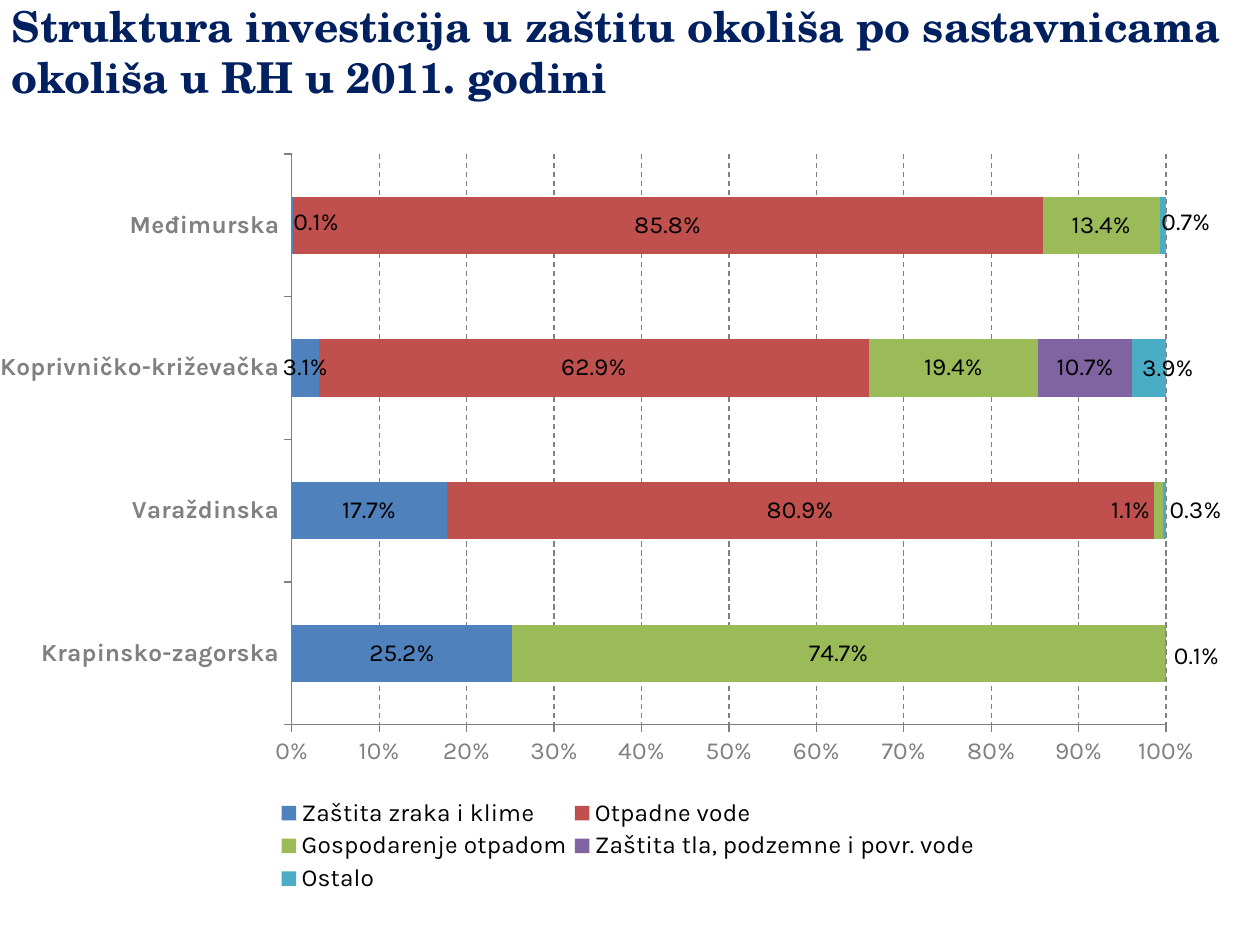
from pptx import Presentation
from pptx.chart.data import CategoryChartData
from pptx.dml.color import RGBColor
from pptx.enum.chart import XL_CHART_TYPE, XL_LABEL_POSITION, XL_LEGEND_POSITION, XL_TICK_MARK
from pptx.enum.dml import MSO_LINE
from pptx.enum.text import MSO_ANCHOR
from pptx.oxml import parse_xml
from pptx.oxml.ns import nsdecls, qn
from pptx.util import Pt

PX = 914400 / 126
STACKED_BARS = XL_CHART_TYPE.BAR_STACKED_100
LABEL_CENTER = XL_LABEL_POSITION.CENTER
LEGEND_BOTTOM = XL_LEGEND_POSITION.BOTTOM
TICK_OUTSIDE = XL_TICK_MARK.OUTSIDE
TICK_NONE = XL_TICK_MARK.NONE
DASH = MSO_LINE.DASH
TOP = MSO_ANCHOR.TOP

TITLE_BOX = (0, 0, 1260, 155)
CHART_BOX = (0, 135, 1245, 764)
PLOT_BOX = (290, 19, 876, 571)
LEGEND_BOX = (272, 660, 710, 102)
GREY = "808080"
TITLE = "Struktura investicija u zaštitu okoliša po sastavnicama okoliša u RH u 2011. godini"
COUNTIES = ["Krapinsko-zagorska", "Varaždinska", "Koprivničko-križevačka", "Međimurska"]
INVESTMENTS = [
    ("Zaštita zraka i klime", "4F81BD", (0.252, 0.177, 0.031, 0.001)),
    ("Otpadne vode", "C0504D", (0, 0.809, 0.629, 0.858)),
    ("Gospodarenje otpadom", "9BBB59", (0.747, 0.011, 0.194, 0.134)),
    ("Zaštita tla, podzemne i povr. vode", "8064A2", (0, 0, 0.107, 0)),
    ("Ostalo", "4BACC6", (0.001, 0.003, 0.039, 0.007)),
]
LABEL_SHIFTS = {
    ("Zaštita zraka i klime", 3): (24, -3),
    ("Gospodarenje otpadom", 1): (-28, 0),
    ("Ostalo", 0): (31, 3),
    ("Ostalo", 1): (31, 0),
    ("Ostalo", 2): (19, 1),
    ("Ostalo", 3): (23, -3),
}


def px(length):
    return round(length * PX)


def color(value):
    return RGBColor.from_string(value)


def set_format(target, values):
    for name, value in values.items():
        setattr(target, name, value)


def set_font(font, value, **values):
    set_format(font, values)
    font.color.rgb = color(value)


def set_line(line, value):
    line.width = Pt(0.75)
    line.color.rgb = color(value)


def manual_layout(box):
    left, top, width, height = box
    parts = {
        "xMode": "edge", "yMode": "edge",
        "x": left / CHART_BOX[2], "y": top / CHART_BOX[3],
        "w": width / CHART_BOX[2], "h": height / CHART_BOX[3],
    }
    content = "".join(f'<c:{name} val="{value}"/>' for name, value in parts.items())
    return f"<c:manualLayout>{content}</c:manualLayout>"


def place_plot_area(chart):
    plot_area = chart._chartSpace.chart.plotArea
    for layout in plot_area.findall(qn("c:layout")):
        plot_area.remove(layout)
    content = manual_layout(PLOT_BOX).replace(
        "<c:manualLayout>", '<c:manualLayout><c:layoutTarget val="inner"/>')
    plot_area.insert(0, parse_xml(f'<c:layout {nsdecls("c")}>{content}</c:layout>'))


def point_label(index, shift):
    content = '<c:delete val="1"/>'
    if shift:
        x, y = shift[0] / CHART_BOX[2], shift[1] / CHART_BOX[3]
        flags = "".join(
            f'<c:{name} val="{int(name == "showVal")}"/>'
            for name in ("showLegendKey", "showVal", "showCatName", "showSerName",
                         "showPercent", "showBubbleSize"))
        content = (f'<c:layout><c:manualLayout><c:x val="{x}"/><c:y val="{y}"/>'
                   f'</c:manualLayout></c:layout><c:dLblPos val="ctr"/>{flags}')
    return parse_xml(f'<c:dLbl {nsdecls("c")}><c:idx val="{index}"/>{content}</c:dLbl>')


def format_series(series, fill):
    series.format.fill.solid()
    series.format.fill.fore_color.rgb = color(fill)
    labels = series.data_labels
    set_format(labels, {
        "show_value": True, "number_format": "0.0%",
        "number_format_is_linked": False, "position": LABEL_CENTER,
    })
    set_font(labels.font, "000000", name="Karla", size=Pt(14))
    position = 0
    for index, value in enumerate(series.values):
        shift = LABEL_SHIFTS.get((series.name, index))
        if shift or not value:
            labels._element.insert(position, point_label(index, shift))
            position += 1


def format_axes(chart):
    for axis, bold in ((chart.category_axis, True), (chart.value_axis, False)):
        set_format(axis, {"major_tick_mark": TICK_OUTSIDE, "minor_tick_mark": TICK_NONE})
        set_line(axis.format.line, GREY)
        set_font(axis.tick_labels.font, GREY, name="Karla", size=Pt(14), bold=bold)
    value_axis = chart.value_axis
    set_format(value_axis, {
        "minimum_scale": 0, "maximum_scale": 1, "major_unit": 0.1,
        "has_major_gridlines": True,
    })
    set_format(value_axis.tick_labels, {"number_format": "0%", "number_format_is_linked": False})
    gridline = value_axis.major_gridlines.format.line
    set_line(gridline, GREY)
    gridline.dash_style = DASH


def add_legend(chart):
    chart.has_legend = True
    legend = chart.legend
    set_format(legend, {"position": LEGEND_BOTTOM, "include_in_layout": False})
    set_font(legend.font, "000000", name="Karla", size=Pt(14))
    layout = parse_xml(f'<c:layout {nsdecls("c")}>{manual_layout(LEGEND_BOX)}</c:layout>')
    legend._element.find(qn("c:legendPos")).addnext(layout)


def add_title(slide, box):
    shape = slide.shapes.add_textbox(*map(px, box))
    shape.fill.solid()
    shape.fill.fore_color.rgb = color("FFFFFF")
    frame = shape.text_frame
    set_format(frame, {
        "word_wrap": True, "vertical_anchor": TOP, "margin_top": 0,
        "margin_left": px(12), "margin_right": px(12),
    })
    paragraph = frame.paragraphs[0]
    paragraph.text = TITLE
    set_font(paragraph.runs[0].font, "002060", name="TeX Gyre Schola", size=Pt(24.3), bold=True)


def add_investment_chart(slide, box):
    data = CategoryChartData(number_format="0.0%")
    data.categories = COUNTIES
    for name, fill, values in INVESTMENTS:
        data.add_series(name, values)
    chart = slide.shapes.add_chart(STACKED_BARS, *map(px, box), data).chart
    chart.has_title = False
    set_font(chart.font, "000000", name="Karla", size=Pt(14))
    plot = chart.plots[0]
    set_format(plot, {"gap_width": 150, "overlap": 100, "vary_by_categories": False})
    for series, (name, fill, values) in zip(plot.series, INVESTMENTS):
        format_series(series, fill)
    format_axes(chart)
    add_legend(chart)
    place_plot_area(chart)


def main():
    presentation = Presentation()
    set_format(presentation, {"slide_width": px(1260), "slide_height": px(945)})
    slide = presentation.slides.add_slide(presentation.slide_layouts[6])
    add_title(slide, TITLE_BOX)
    add_investment_chart(slide, CHART_BOX)
    presentation.save("out.pptx")


if __name__ == "__main__":
    main()
